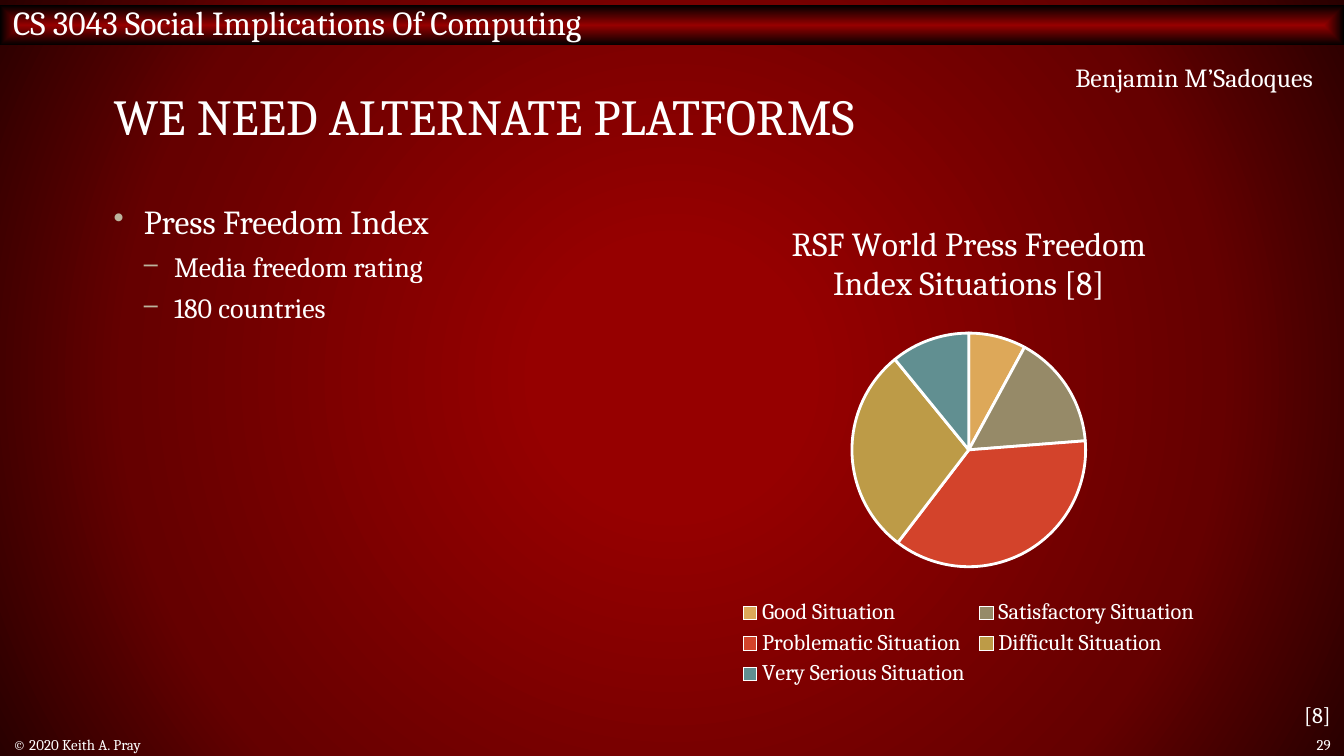
from lxml.etree import SubElement
from pptx import Presentation
from pptx.chart.data import CategoryChartData
from pptx.dml.color import RGBColor
from pptx.enum.chart import XL_CHART_TYPE, XL_LEGEND_POSITION
from pptx.enum.shapes import MSO_SHAPE
from pptx.enum.text import MSO_ANCHOR, PP_ALIGN
from pptx.oxml.ns import qn
from pptx.util import Cm, Pt

WHITE = "FFFFFF"
RED = "960000"
WIDTH, HEIGHT = 25.4, 14.29


def colour(hex_value):
    return RGBColor.from_string(hex_value)


def apply_format(target, **values):
    for name, value in values.items():
        setattr(target, name, value)


def path_gradient(fill, owner, shape_kind, stops):
    """Give fill a gradient that runs from the centre of its owner outwards."""
    fill.gradient()
    gradient = next(owner.iter(qn("a:gradFill")))
    for child in list(gradient):
        gradient.remove(child)
    stop_list = SubElement(gradient, qn("a:gsLst"))
    for position, hex_value in stops:
        stop = SubElement(stop_list, qn("a:gs"), pos=str(position * 1000))
        SubElement(stop, qn("a:srgbClr"), val=hex_value)
    centre = SubElement(gradient, qn("a:path"), {"path": shape_kind})
    SubElement(centre, qn("a:fillToRect"), {side: "50000" for side in "ltrb"})


class LectureSlide:
    font_name = "Cambria"
    bullet_colour = "BCB49E"

    def __init__(self, slide):
        self.slide = slide

    def style(self, font, size):
        apply_format(font, name=self.font_name, size=Pt(size), bold=False)
        font.color.rgb = colour(WHITE)

    def background(self, stops):
        path_gradient(self.slide.background.fill, self.slide.element, "circle", stops)

    def set_text(self, frame, text, size, anchor=MSO_ANCHOR.MIDDLE, **paragraph_format):
        apply_format(frame, word_wrap=True, vertical_anchor=anchor)
        paragraph = frame.paragraphs[0]
        run = paragraph.add_run()
        run.text = text
        apply_format(paragraph, **paragraph_format)
        self.style(run.font, size)

    def banner(self, box, text, size, stops):
        bar = self.slide.shapes.add_shape(MSO_SHAPE.RECTANGLE, *map(Cm, box))
        bar.shadow.inherit = False
        bar.line.fill.background()
        path_gradient(bar.fill, bar.element.spPr, "shape", stops)
        bar.text_frame.margin_top = 0
        self.set_text(bar.text_frame, text, size, alignment=PP_ALIGN.LEFT)

    def text(self, box, text, size, **options):
        frame = self.slide.shapes.add_textbox(*map(Cm, box)).text_frame
        self.set_text(frame, text, size, **options)

    def bullets(self, box, items):
        """Add a list of (level, text) items."""
        levels = [("•", 18, 12), ("–", 15, 6)]
        indent = Cm(0.57)
        frame = self.slide.shapes.add_textbox(*map(Cm, box)).text_frame
        frame.word_wrap = True
        for index, (level, text) in enumerate(items):
            mark, size, gap = levels[level]
            paragraph = frame.add_paragraph() if index else frame.paragraphs[0]
            paragraph.add_run().text = text
            apply_format(paragraph, level=level, line_spacing=0.9,
                         space_before=Pt(gap if index else 0))
            properties = paragraph._p.get_or_add_pPr()
            properties.set("marL", str(indent * (level + 1)))
            properties.set("indent", str(-indent))
            bullet_fill = SubElement(properties, qn("a:buClr"))
            SubElement(bullet_fill, qn("a:srgbClr"), val=self.bullet_colour)
            SubElement(properties, qn("a:buSzPct"), val="90000")
            SubElement(properties, qn("a:buChar"), char=mark)
            self.style(paragraph.runs[0].font, size)

    def pie(self, box, title, slices):
        """Add a pie chart of (category, value, colour) slices."""
        categories, values, fills = zip(*slices)
        data = CategoryChartData()
        data.categories = categories
        data.add_series("Series 1", values)
        chart = self.slide.shapes.add_chart(
            XL_CHART_TYPE.PIE, *map(Cm, box), data).chart
        self.style(chart.font, 10)
        apply_format(chart, has_title=True, has_legend=True)
        heading = chart.chart_title.text_frame
        heading.text = title
        self.style(heading.paragraphs[0].runs[0].font, 18)
        apply_format(chart.legend, position=XL_LEGEND_POSITION.BOTTOM,
                     include_in_layout=False)
        self.style(chart.legend.font, 12)
        plot = chart.plots[0]
        plot.vary_by_categories = True
        for index, hex_value in enumerate(fills):
            look = plot.series[0].points[index].format
            look.fill.solid()
            look.fill.fore_color.rgb = colour(hex_value)
            look.line.color.rgb = colour(WHITE)
            look.line.width = Pt(1.5)


def main():
    deck = Presentation()
    apply_format(deck, slide_width=Cm(WIDTH), slide_height=Cm(HEIGHT))
    page = LectureSlide(deck.slides.add_slide(deck.slide_layouts[6]))
    right = {"alignment": PP_ALIGN.RIGHT}
    top_right = {"anchor": MSO_ANCHOR.TOP, **right}
    column_top, column_width, column_height = 3.76, 10.36, 9.32
    footer_top, footer_height = 13.87, 0.41

    page.background([(17, RED), (71, "650000"), (100, "290000")])
    page.banner((0, 0.1, WIDTH, 0.76), "CS 3043 Social Implications Of Computing",
                18, [(0, RED), (100, "000000")])
    page.text((1.9, 1.02, 21.59, 2.54), "WE NEED ALTERNATE PLATFORMS", 27,
              line_spacing=0.8)
    page.bullets((1.9, column_top, column_width, column_height), [
        (0, "Press Freedom Index"),
        (1, "Media freedom rating"),
        (1, "180 countries"),
    ])
    page.text((0, footer_top, 15.44, footer_height), "© 2020 Keith A. Pray", 8)
    page.text((19.02, 1.04, 6.05, 0.86), "Benjamin M’Sadoques", 14, **top_right)
    page.text((0, 13.13, WIDTH, 0.76), "[8]", 12, **top_right)
    page.pie((13.13, column_top, column_width, column_height),
             "RSF World Press Freedom Index Situations [8]", [
                 ("Good Situation", 8, "DDA859"),
                 ("Satisfactory Situation", 16, "968A68"),
                 ("Problematic Situation", 37, "D3432B"),
                 ("Difficult Situation", 29, "BD9B47"),
                 ("Very Serious Situation", 11, "618F91"),
             ])
    page.text((23.67, footer_top, 1.73, footer_height), "29", 8, **right)
    deck.save("out.pptx")


if __name__ == "__main__":
    main()
